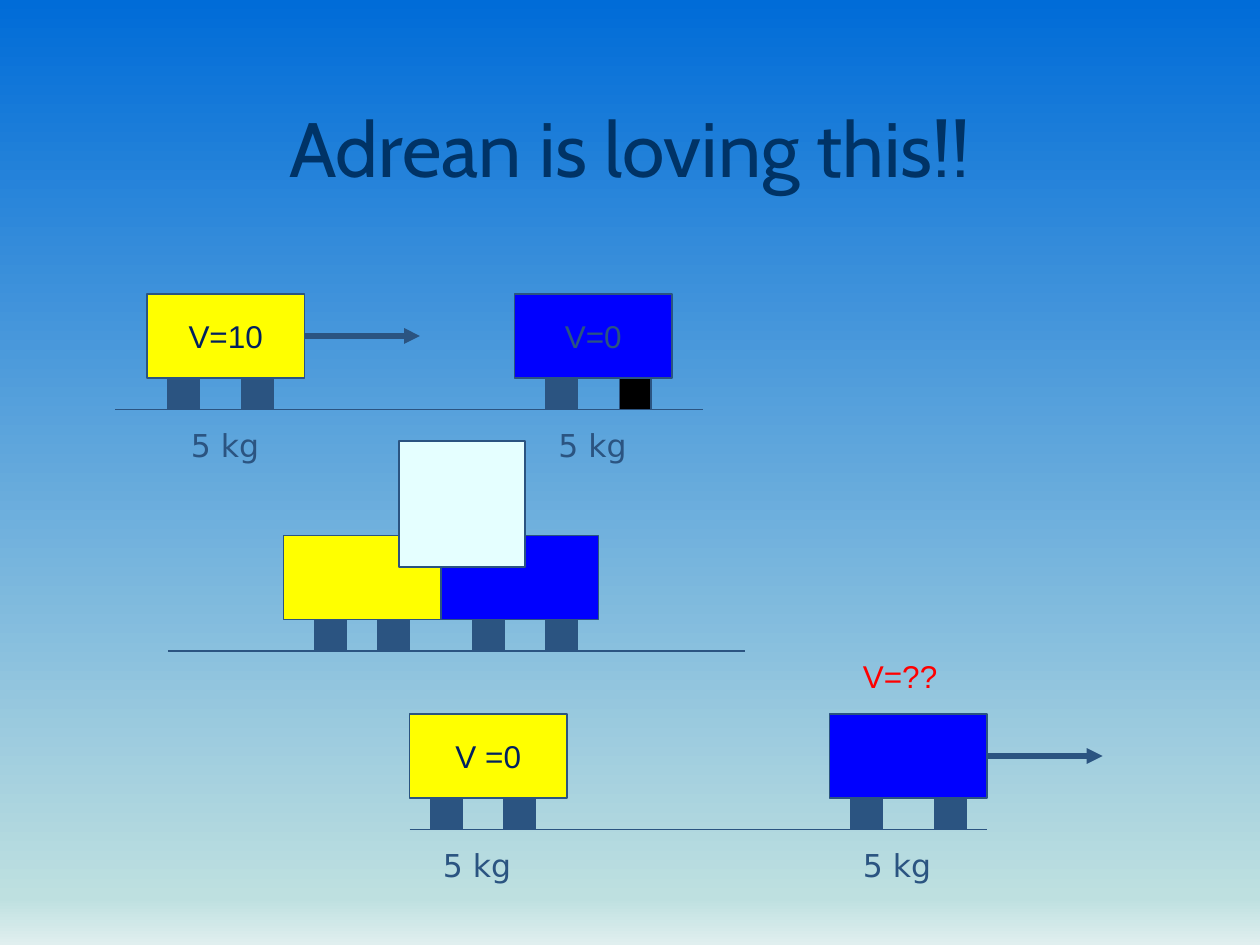
from copy import deepcopy

from pptx import Presentation
from pptx.dml.color import RGBColor
from pptx.enum.shapes import MSO_CONNECTOR, MSO_SHAPE
from pptx.enum.text import MSO_ANCHOR, PP_ALIGN
from pptx.oxml.ns import qn
from pptx.oxml.xmlchemy import OxmlElement
from pptx.util import Emu, Pt

SCALE = 9525
RECT = MSO_SHAPE.RECTANGLE
LINE = MSO_CONNECTOR.STRAIGHT
LEFT, MID = PP_ALIGN.LEFT, PP_ALIGN.CENTER
TOP, HALF = MSO_ANCHOR.TOP, MSO_ANCHOR.MIDDLE
NAVY, INK, STEEL = "003366", "002060", "2B5481"
YELLOW, BLUE, BLACK, RED, ICE = "FFFF00", "0000FF", "000000", "FF0000", "E5FFFF"
SKY = ((0, "006CD8"), (0.95, "BEE0E0"), (1, "E0EFEF"))
CAR_W, CAR_H, WHEEL = 120, 64, 24


def px(n):
    return Emu(n * SCALE)


def rgb(code):
    return RGBColor.from_string(code)


def apply(item, values):
    for name, value in values.items():
        setattr(item, name, value)


class Board:
    body = {"name": "Arial", "size": Pt(18)}
    mass = {"name": "DejaVu Sans", "size": Pt(18)}
    head = {"name": "Cabin", "size": Pt(44)}

    def __init__(self, slide):
        self.slide = slide
        self.shapes = slide.shapes

    def sky(self, stops):
        fill = self.slide.background.fill
        fill.gradient()
        fill.gradient_angle = 270
        group = next(self.slide.element.iter(qn("a:gsLst")))
        group.append(deepcopy(group[-1]))
        for stop, (place, code) in zip(fill.gradient_stops, stops):
            stop.position = place
            stop.color.rgb = rgb(code)

    def words(self, shape, text, code, font, align=LEFT, anchor=TOP, wrap=False, gap=0):
        frame = shape.text_frame
        apply(frame, {"word_wrap": wrap, "vertical_anchor": anchor})
        para = frame.paragraphs[0]
        apply(para, {"alignment": align, "space_before": Pt(gap)})
        run = para.add_run()
        run.text = text
        apply(run.font, font)
        run.font.color.rgb = rgb(code)

    def label(self, x, y, w, h, *args, **kind):
        box = self.shapes.add_textbox(px(x), px(y), px(w), px(h))
        self.words(box, *args, **kind)

    def block(self, x, y, w, h, code):
        shape = self.shapes.add_shape(RECT, px(x), px(y), px(w), px(h))
        shape.shadow.inherit = False
        shape.fill.solid()
        shape.fill.fore_color.rgb = rgb(code)
        shape.line.color.rgb = rgb(STEEL)
        shape.line.width = Pt(0.75)
        return shape

    def car(self, x, y, code, wheels, text="", ink=INK):
        shape = self.block(x, y, CAR_W, CAR_H, code)
        if text:
            self.words(shape, text, ink, self.body, MID, HALF, True)
        for step, paint in wheels:
            self.block(x + step, y + CAR_H, WHEEL, WHEEL, paint)
        return shape

    def rule(self, x, y, end, width=0.75):
        line = self.shapes.add_connector(LINE, px(x), px(y), px(end), px(y))
        line.line.color.rgb = rgb(STEEL)
        line.line.width = Pt(width)
        line.element.spPr.append(OxmlElement("a:effectLst"))
        return line

    def arrow(self, car, x, y, end):
        line = self.rule(x, y, end, 3)
        line.begin_connect(car, 3)
        tip = OxmlElement("a:tailEnd")
        tip.set("type", "triangle")
        line.element.spPr.find(qn("a:ln")).append(tip)


def main():
    deck = Presentation()
    apply(deck, {"slide_width": px(960), "slide_height": px(720)})
    board = Board(deck.slides.add_slide(deck.slide_layouts[6]))
    board.sky(SKY)
    board.label(48, 40, 864, 144, "Adrean is loving this!!", NAVY, board.head,
                align=MID, anchor=HALF, wrap=True)

    first = board.car(112, 224, YELLOW, ((16, STEEL), (72, STEEL)), "V=10")
    board.car(392, 224, BLUE, ((24, STEEL), (80, BLACK)), "V=0", STEEL)
    board.car(216, 408, YELLOW, ((24, STEEL), (72, STEEL)))
    board.car(336, 408, BLUE, ((24, STEEL), (80, STEEL)))
    board.car(312, 544, YELLOW, ((16, STEEL), (72, STEEL)), "V =0")
    last = board.car(632, 544, BLUE, ((16, STEEL), (80, STEEL)))
    board.block(304, 336, 96, 96, ICE)

    for x, y, end in ((88, 312, 264), (360, 312, 536), (248, 312, 392),
                      (128, 496, 568), (312, 632, 752)):
        board.rule(x, y, end)
    board.arrow(first, 232, 256, 320)
    board.arrow(last, 752, 576, 840)

    board.label(648, 496, 76, 38, "V=??", RED, board.body)
    for x, y in ((136, 320), (416, 320), (328, 640), (648, 640)):
        board.label(x, y, 80, 38, "5 kg", STEEL, board.mass, gap=9)
    deck.save("out.pptx")


if __name__ == "__main__":
    main()
